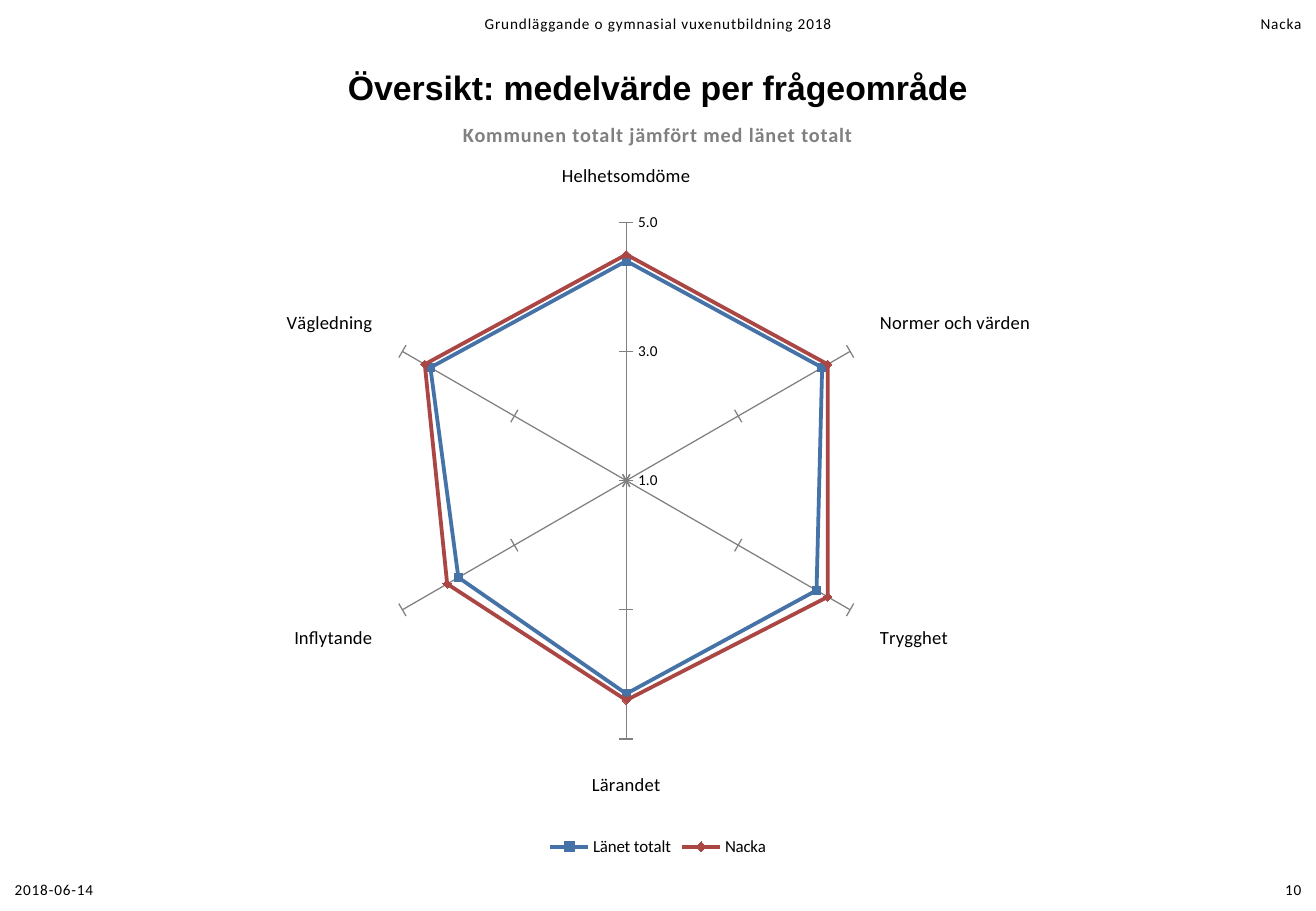
from dataclasses import dataclass

from lxml import etree
from pptx import Presentation, util as u
from pptx.chart.data import CategoryChartData
from pptx.dml.color import RGBColor
from pptx.enum import chart as ch, text
from pptx.oxml import parse_xml
from pptx.oxml.ns import nsdecls, qn

SLIDE_W, SLIDE_H = 10.83, 7.5
MARGIN = 0.12
COL = (SLIDE_W - 2 * MARGIN) / 6  # six columns between the margins


@dataclass(frozen=True)
class Theme:
    head: str = "Arial"
    body: str = "Calibri"
    ink: str = "000000"
    muted: str = "808080"
    county: str = "4572A7"
    town: str = "AA4643"
    title: int = 20
    subtitle: int = 12
    category: int = 11
    legend: int = 10
    small: int = 9


T = Theme()
ALIGN = text.PP_ALIGN
TOP, BOTTOM = text.MSO_ANCHOR.TOP, text.MSO_ANCHOR.BOTTOM

CATEGORIES = ["Helhetsomdöme", "Normer och värden", "Trygghet",
              "Lärandet", "Inflytande", "Vägledning"]
SERIES = [
    ("Länet totalt", (4.4, 4.5, 4.4, 4.3, 4.0, 4.5), T.county, ch.XL_MARKER_STYLE.SQUARE),
    ("Nacka", (4.5, 4.6, 4.6, 4.4, 4.2, 4.6), T.town, ch.XL_MARKER_STYLE.DIAMOND),
]


def style_font(font, size, color=T.ink, name=T.body, bold=False):
    font.size, font.name, font.bold = u.Pt(size), name, bold
    font.color.rgb = RGBColor.from_string(color)


def style_line(line, color, width):
    line.color.rgb = RGBColor.from_string(color)
    line.width = u.Pt(width)


def add_label(s, words, col, span, top, height, align, size=T.small,
              anchor=TOP, spacing=50, **font):
    """Text box spanning whole columns; spacing is in hundredths of a point."""
    sp = s.shapes.add_textbox(u.Inches(MARGIN + col * COL), u.Inches(top),
                              u.Inches(span * COL), u.Inches(height))
    tf = sp.text_frame
    tf.word_wrap, tf.vertical_anchor = True, anchor
    tf.margin_left = tf.margin_right = tf.margin_top = tf.margin_bottom = 0
    p = tf.paragraphs[0]
    p.alignment = align
    r = p.add_run()
    r.text = words
    style_font(r.font, size, **font)
    if spacing:
        r.font._element.set("spc", str(spacing))


def place_plot(chart, x, y, w, h):
    """Fix the inner plot area, given as shares of the chart frame."""
    area = chart._chartSpace.find(".//" + qn("c:plotArea"))
    for old in area.findall(qn("c:layout")):
        area.remove(old)
    layout = parse_xml(f"<c:layout {nsdecls('c')}><c:manualLayout/></c:layout>")
    settings = [("layoutTarget", "inner"), ("xMode", "edge"), ("yMode", "edge"),
                ("x", x), ("y", y), ("w", w), ("h", h)]
    for tag, value in settings:
        etree.SubElement(layout[0], qn("c:" + tag)).set("val", str(value))
    area.insert(0, layout)


def add_radar(s):
    data = CategoryChartData(number_format="0.0")
    data.categories = CATEGORIES
    for name, values, _, _ in SERIES:
        data.add_series(name, values)
    chart = s.shapes.add_chart(ch.XL_CHART_TYPE.RADAR_MARKERS, u.Inches(0.2), u.Inches(1.18),
                               u.Inches(10.43), u.Inches(5.91), data).chart
    style_font(chart.font, T.legend)
    chart.has_title = False
    place_plot(chart, 0.27, 0.11, 0.41, 0.72)

    # Legend
    chart.has_legend = True
    chart.legend.position = ch.XL_LEGEND_POSITION.BOTTOM
    chart.legend.include_in_layout = False
    style_font(chart.legend.font, T.legend)

    # Axes
    cat, val = chart.category_axis, chart.value_axis
    cat.has_major_gridlines, val.has_major_gridlines = True, False
    style_line(cat.major_gridlines.format.line, T.muted, 0.75)
    cat.major_tick_mark, val.major_tick_mark = ch.XL_TICK_MARK.OUTSIDE, ch.XL_TICK_MARK.CROSS
    val.minimum_scale, val.maximum_scale, val.major_unit = 1, 5, 2
    val.tick_labels.number_format = "0.0;0.0"
    val.tick_labels.number_format_is_linked = False
    for axis, size in ((cat, T.category), (val, T.small)):
        style_font(axis.tick_labels.font, size)
        style_line(axis.format.line, T.muted, 0.75)

    # Series
    for series, (_, _, color, marker) in zip(chart.plots[0].series, SERIES):
        series.smooth = False
        style_line(series.format.line, color, 2.25)
        series.marker.style, series.marker.size = marker, 5
        series.marker.format.fill.solid()
        series.marker.format.fill.fore_color.rgb = RGBColor.from_string(color)
        style_line(series.marker.format.line, color, 0.75)


def main():
    prs = Presentation()
    prs.slide_width, prs.slide_height = u.Inches(SLIDE_W), u.Inches(SLIDE_H)
    s = prs.slides.add_slide(prs.slide_layouts[6])

    # Header and footer
    add_label(s, "Grundläggande o gymnasial vuxenutbildning 2018", 2, 2, MARGIN, 0.56, ALIGN.CENTER)
    add_label(s, "Nacka", 4, 2, MARGIN, 0.56, ALIGN.RIGHT)
    add_label(s, "2018-06-14", 0, 3, 6.97, 0.43, ALIGN.LEFT, anchor=BOTTOM)
    add_label(s, "10", 3, 3, 6.97, 0.43, ALIGN.RIGHT, anchor=BOTTOM)

    # Titles
    add_label(s, "Översikt: medelvärde per frågeområde", 0, 6, 0.55, 0.74, ALIGN.CENTER,
              T.title, spacing=0, name=T.head, bold=True)
    add_label(s, "Kommunen totalt jämfört med länet totalt", 0, 6, 1.01, 0.39, ALIGN.CENTER,
              T.subtitle, color=T.muted, bold=True)

    # Mean value per question area
    add_radar(s)
    prs.save("out.pptx")


if __name__ == "__main__":
    main()
